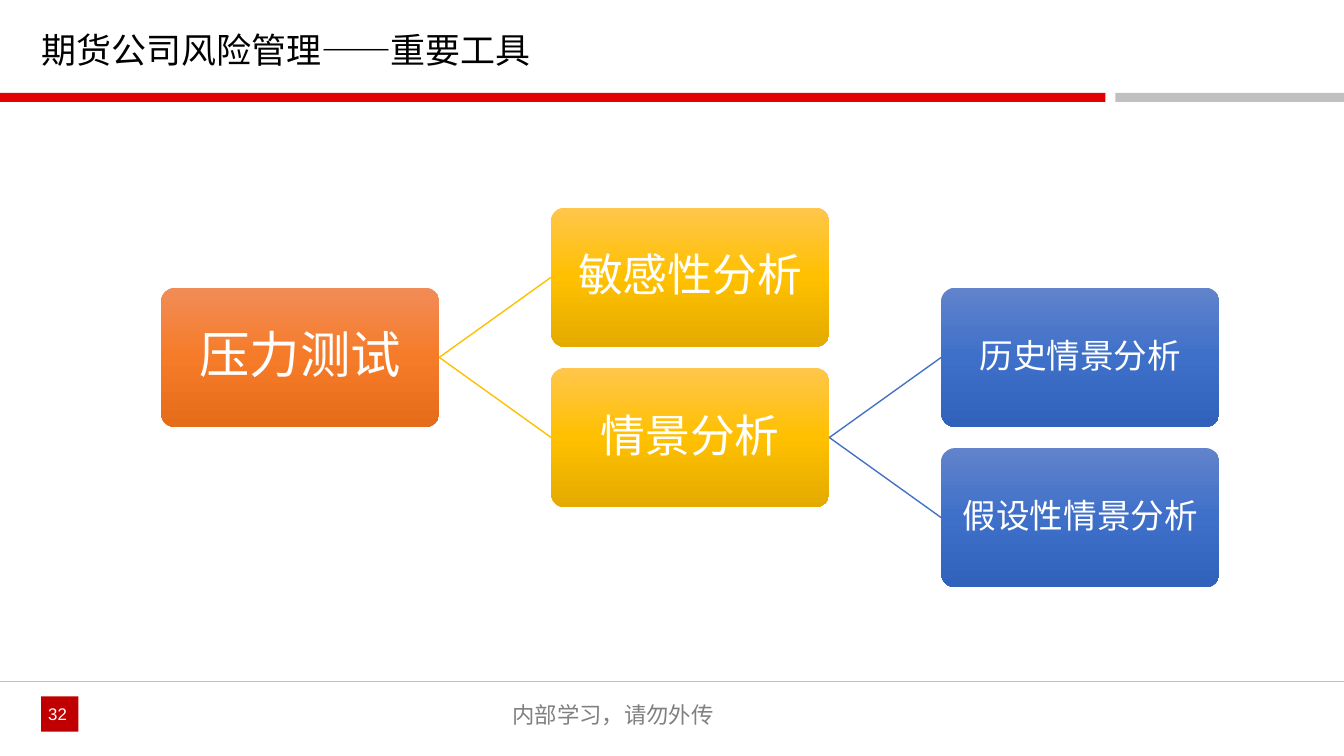
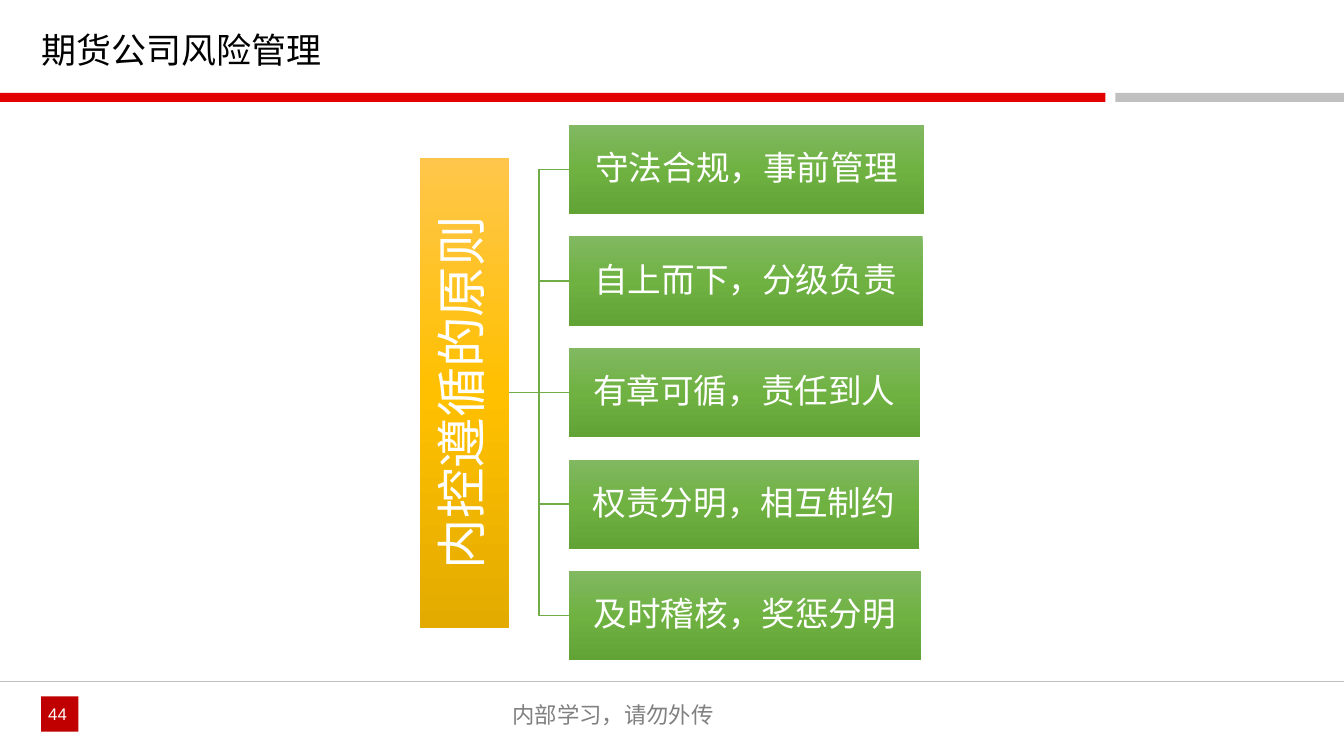
from copy import deepcopy

from pptx import Presentation
from pptx.dml.color import RGBColor
from pptx.enum.shapes import MSO_CONNECTOR as CONNECTOR, MSO_SHAPE as SHAPE
from pptx.enum.text import MSO_ANCHOR as ANCHOR, MSO_AUTO_SIZE as AUTO_SIZE, PP_ALIGN as ALIGN
from pptx.oxml.ns import qn
from pptx.util import Cm, Pt

SLIDE_WIDTH, SLIDE_HEIGHT = 33.87, 19.05
CJK_FONT = "Noto Sans CJK SC"
NODE_FONT = "Calibri"
NUMBER_FONT = "Arial"

BLACK = RGBColor(0x00, 0x00, 0x00)
WHITE = RGBColor(0xFF, 0xFF, 0xFF)
BAND_RED = RGBColor(0xE2, 0x00, 0x00)
NUMBER_RED = RGBColor(0xC0, 0x00, 0x00)
SILVER = RGBColor(0xC0, 0xC0, 0xC0)
FOOTER_GREY = RGBColor(0x80, 0x80, 0x80)
GOLD = RGBColor(0xFF, 0xC0, 0x00)
BLUE = RGBColor(0x44, 0x72, 0xC4)
GREEN = RGBColor(0x70, 0xAD, 0x47)

# Light top, middle and dark bottom of each node gradient
ORANGE_SHADES = (RGBColor(0xF1, 0x8C, 0x57), RGBColor(0xF6, 0x7B, 0x28), RGBColor(0xE5, 0x6C, 0x19))
GOLD_SHADES = (RGBColor(0xFF, 0xC6, 0x4B), GOLD, RGBColor(0xE3, 0xAB, 0x00))
BLUE_SHADES = (RGBColor(0x61, 0x83, 0xCB), RGBColor(0x3E, 0x70, 0xCA), RGBColor(0x30, 0x62, 0xBB))
GREEN_SHADES = (RGBColor(0x81, 0xB8, 0x61), RGBColor(0x6F, 0xB2, 0x42), RGBColor(0x62, 0xA3, 0x36))

# Shades, text size and colour of the line from the parent, per tree level
TREE_LEVELS = (
    (ORANGE_SHADES, 36, None),
    (GOLD_SHADES, 32, GOLD),
    (BLUE_SHADES, 24, BLUE),
)
STRESS_TEST_TREE = (
    "压力测试",
    [
        ("敏感性分析", []),
        ("情景分析", [("历史情景分析", []), ("假设性情景分析", [])]),
    ],
)
# Each principle with the width of its box
PRINCIPLES = (
    ("守法合规，事前管理", 8.97),
    ("自上而下，分级负责", 8.92),
    ("有章可循，责任到人", 8.86),
    ("权责分明，相互制约", 8.84),
    ("及时稽核，奖惩分明", 8.89),
)


def write_text(text_frame, text, size, color, font_name, align=ALIGN.LEFT, line_spacing=None):
    paragraph = text_frame.paragraphs[0]
    paragraph.alignment = align
    if line_spacing:
        paragraph.line_spacing = line_spacing
    run = paragraph.add_run()
    run.text = text
    run.font.size = Pt(size)
    run.font.color.rgb = color
    run.font.name = font_name
    east_asian = run.font._element.makeelement(qn("a:ea"), {"typeface": CJK_FONT})
    run.font._element.find(qn("a:latin")).addnext(east_asian)


def set_insets(text_frame, inset):
    text_frame.margin_left = text_frame.margin_right = Cm(inset)
    text_frame.margin_top = text_frame.margin_bottom = Cm(inset)


def add_block(slide, kind, left, top, width, height):
    """Add a preset shape without outline or shadow."""
    shape = slide.shapes.add_shape(kind, Cm(left), Cm(top), Cm(width), Cm(height))
    shape.shadow.inherit = False
    shape.line.fill.background()
    return shape


def add_band(slide, left, top, width, height, color):
    band = add_block(slide, SHAPE.RECTANGLE, left, top, width, height)
    band.fill.solid()
    band.fill.fore_color.rgb = color
    return band


def add_node(slide, kind, box, text, size, shades):
    """Add a gradient box with centred white text."""
    node = add_block(slide, kind, *box)
    node.fill.gradient()
    node.fill.gradient_angle = 270
    stop_list = node._element.xpath(".//a:gsLst")[0]
    stop_list.append(deepcopy(stop_list[0]))
    for stop, position, shade in zip(node.fill.gradient_stops, (0, 0.5, 1), shades):
        stop.position = position
        stop.color.rgb = shade
    text_frame = node.text_frame
    text_frame.word_wrap = True
    text_frame.vertical_anchor = ANCHOR.MIDDLE
    set_insets(text_frame, 0.06)
    write_text(text_frame, text, size, WHITE, NODE_FONT, ALIGN.CENTER, 0.9)
    return node


def add_line(slide, color, kind=CONNECTOR.STRAIGHT, begin=(0, 0), end=(0, 0)):
    line = slide.shapes.add_connector(kind, *(Cm(value) for value in (*begin, *end)))
    line.line.color.rgb = color
    line.line.width = Pt(1)
    properties = line._element.spPr
    properties.append(properties.makeelement(qn("a:effectLst"), {}))
    return line


def join_nodes(slide, parent, child, color, kind=CONNECTOR.STRAIGHT):
    """Join the right side of the parent to the left side of the child."""
    line = add_line(slide, color, kind)
    line.begin_connect(parent, 3)
    line.end_connect(child, 1)


def add_title(slide, text):
    title = slide.shapes.title
    title.left, title.top, title.width, title.height = Cm(0.79), Cm(0.66), Cm(27.08), Cm(1.32)
    title.text_frame.auto_size = AUTO_SIZE.NONE
    title.text_frame.vertical_anchor = ANCHOR.MIDDLE
    write_text(title.text_frame, text, 25, BLACK, CJK_FONT, line_spacing=0.9)


def add_footer(slide, page_number):
    add_line(slide, SILVER, begin=(0, 17.17), end=(SLIDE_WIDTH, 17.17))
    number_box = add_band(slide, 1.04, 17.55, 0.94, 0.89, NUMBER_RED)
    set_insets(number_box.text_frame, 0)
    number_box.text_frame.word_wrap = False
    number_box.text_frame.vertical_anchor = ANCHOR.MIDDLE
    write_text(number_box.text_frame, f"{page_number} ", 12, WHITE, NUMBER_FONT, ALIGN.CENTER)
    notice = slide.shapes.add_textbox(Cm(12.67), Cm(17.55), Cm(5.64), Cm(0.94))
    notice.text_frame.word_wrap = False
    write_text(notice.text_frame, "内部学习，请勿外传", 16, FOOTER_GREY, CJK_FONT)


def add_framed_slide(presentation, title, page_number):
    """Add a slide with the shared title, bands and footer."""
    slide = presentation.slides.add_slide(presentation.slide_layouts[5])
    add_band(slide, 0, 2.34, 27.86, 0.23, BAND_RED)
    add_band(slide, 28.11, 2.34, SLIDE_WIDTH - 28.11, 0.23, SILVER)
    add_footer(slide, page_number)
    add_title(slide, title)
    return slide


def draw_tree(slide, left, top, branch, level=0, parent=None):
    """Draw a branch with its root box at left, top and its children centred to the right."""
    width, height, column_step, row_step = 7.01, 3.51, 9.83, 4.04
    text, children = branch
    shades, size, line_color = TREE_LEVELS[level]
    node = add_node(slide, SHAPE.ROUNDED_RECTANGLE, (left, top, width, height), text, size, shades)
    node.adjustments[0] = 0.1
    if parent is not None:
        join_nodes(slide, parent, node, line_color)
    first_top = top - row_step * (len(children) - 1) / 2
    for index, child in enumerate(children):
        draw_tree(slide, left + column_step, first_top + index * row_step, child, level + 1, node)


def draw_principles(slide, left, top, heading, principles):
    """Draw a column of boxes joined to an upright heading bar on their left."""
    thickness, bar_length, row_step, rows_offset = 2.25, 11.84, 2.81, 3.75
    rows_height = row_step * (len(principles) - 1) + thickness
    bar_top = top + (rows_height - bar_length) / 2
    bar = add_node(slide, SHAPE.RECTANGLE, (left, bar_top, thickness, bar_length),
                   heading, 36, GOLD_SHADES)
    bar.text_frame._txBody.bodyPr.set("vert", "vert270")
    for index, (text, width) in enumerate(principles):
        box = (left + rows_offset, top + index * row_step, width, thickness)
        row = add_node(slide, SHAPE.RECTANGLE, box, text, 24, GREEN_SHADES)
        is_middle = 2 * index == len(principles) - 1
        join_nodes(slide, bar, row, GREEN, CONNECTOR.STRAIGHT if is_middle else CONNECTOR.ELBOW)


def main():
    presentation = Presentation()
    presentation.slide_width = Cm(SLIDE_WIDTH)
    presentation.slide_height = Cm(SLIDE_HEIGHT)

    tools_slide = add_framed_slide(presentation, "期货公司风险管理——重要工具", 32)
    draw_tree(tools_slide, 4.06, 7.25, STRESS_TEST_TREE)

    principles_slide = add_framed_slide(presentation, "期货公司风险管理", 44)
    draw_principles(principles_slide, 10.58, 3.15, "内控遵循的原则", PRINCIPLES)

    presentation.save("out.pptx")


if __name__ == "__main__":
    main()
